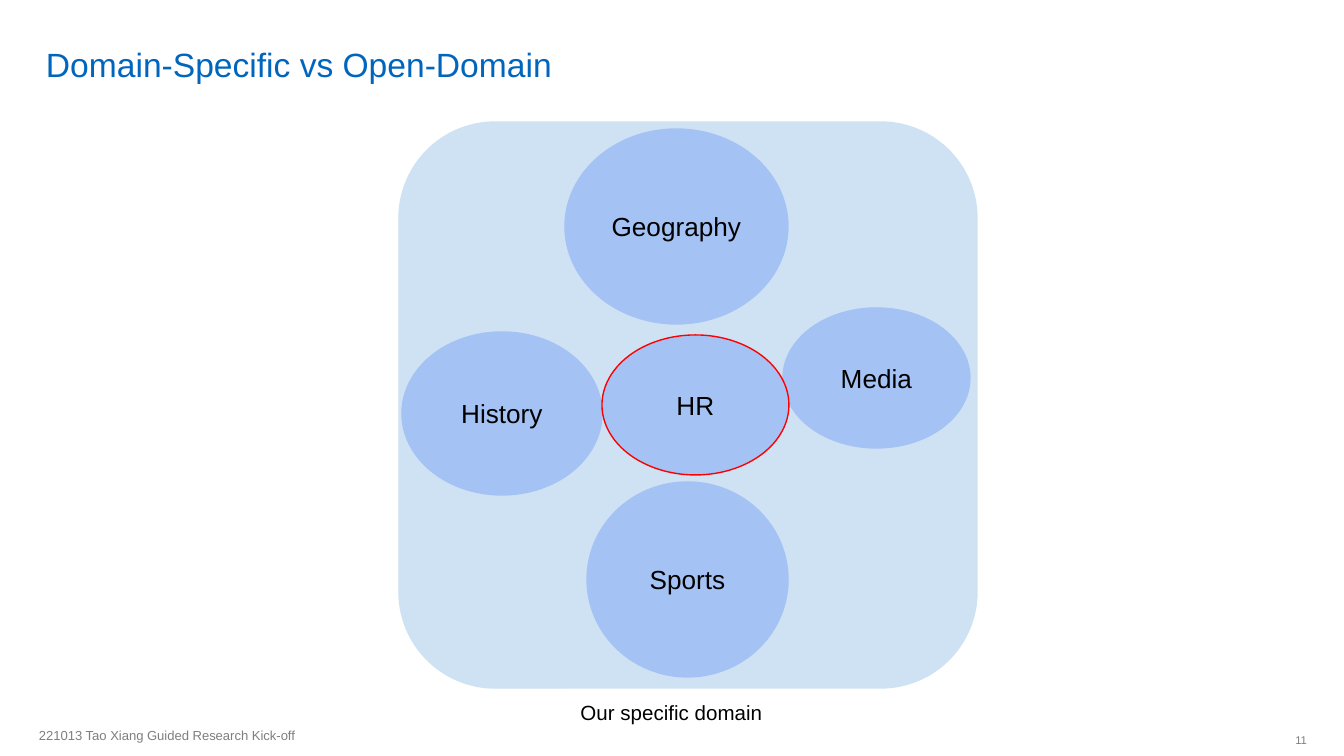
from pptx import Presentation
from pptx.dml.color import RGBColor
from pptx.enum.shapes import MSO_SHAPE
from pptx.enum.text import MSO_ANCHOR, PP_ALIGN
from pptx.util import Pt

PX = 914400 / 134.4  # EMU per pixel

TITLE_BLUE = RGBColor(0x00, 0x65, 0xBD)
PANEL_BLUE = RGBColor(0xCF, 0xE2, 0xF3)
TOPIC_BLUE = RGBColor(0xA4, 0xC2, 0xF4)
RED = RGBColor(0xFF, 0x00, 0x00)
BLACK = RGBColor(0x00, 0x00, 0x00)
GRAY = RGBColor(0x7F, 0x7F, 0x7F)

# Label, box in px, outline colour
TOPICS = [
    ("Geography", (565, 129, 223, 195), TOPIC_BLUE),
    ("History", (402, 332, 200, 163), TOPIC_BLUE),
    ("Media", (783, 308, 187, 140), TOPIC_BLUE),
    ("Sports", (587, 482, 201, 195), TOPIC_BLUE),
    ("HR", (602, 335, 187, 140), RED),
]


def px(n):
    return round(n * PX)


def set_text(s, text, size, color, align, anchor, insets):
    tf = s.text_frame
    tf.word_wrap = True
    tf.vertical_anchor = anchor
    tf.margin_left, tf.margin_top, tf.margin_right, tf.margin_bottom = map(px, insets)
    tf.text = text
    p = tf.paragraphs[0]
    p.alignment = align
    font = p.runs[0].font
    font.name = "Arial"
    font.size = Pt(size)
    font.color.rgb = color
    return p


def add_text(slide, box, text, size, color, align=PP_ALIGN.LEFT,
             anchor=MSO_ANCHOR.MIDDLE, insets=(13, 7, 13, 7)):
    s = slide.shapes.add_textbox(*map(px, box))
    return set_text(s, text, size, color, align, anchor, insets)


def add_filled(slide, kind, box, fill, line):
    s = slide.shapes.add_shape(kind, *map(px, box))
    s.shadow.inherit = False
    s.fill.solid()
    s.fill.fore_color.rgb = fill
    s.line.color.rgb = line
    s.line.width = Pt(0.75)
    return s


def add_topic(slide, label, box, line):
    s = add_filled(slide, MSO_SHAPE.OVAL, box, TOPIC_BLUE, line)
    set_text(s, label, 14, BLACK, PP_ALIGN.CENTER, MSO_ANCHOR.MIDDLE, (13, 13, 13, 13))


def main():
    prs = Presentation()
    prs.slide_width, prs.slide_height = px(1344), px(756)
    slide = prs.slides.add_slide(prs.slide_layouts[6])

    # Title
    title = add_text(slide, (36, 5, 1167, 80), "Domain-Specific vs Open-Domain", 18,
                     TITLE_BLUE, anchor=MSO_ANCHOR.BOTTOM, insets=(10, 0, 10, 0))
    title.line_spacing = 0.9

    # Open domain panel with its topics
    panel = add_filled(slide, MSO_SHAPE.ROUNDED_RECTANGLE, (399, 122, 578, 566),
                       PANEL_BLUE, PANEL_BLUE)
    panel.adjustments[0] = 0.17
    for label, box, line in TOPICS:
        add_topic(slide, label, box, line)

    # Caption
    add_text(slide, (554, 688, 235, 52), "Our specific domain", 11, BLACK,
             PP_ALIGN.CENTER, MSO_ANCHOR.TOP, (13, 13, 13, 13))

    # Footer and page number
    add_text(slide, (26, 714, 847, 43), "221013 Tao Xiang Guided Research Kick-off", 7, GRAY)
    add_text(slide, (1270, 724, 37, 32), "11", 6, GRAY, PP_ALIGN.RIGHT,
             insets=(10, 5, 0, 5))

    prs.save("out.pptx")


if __name__ == "__main__":
    main()
